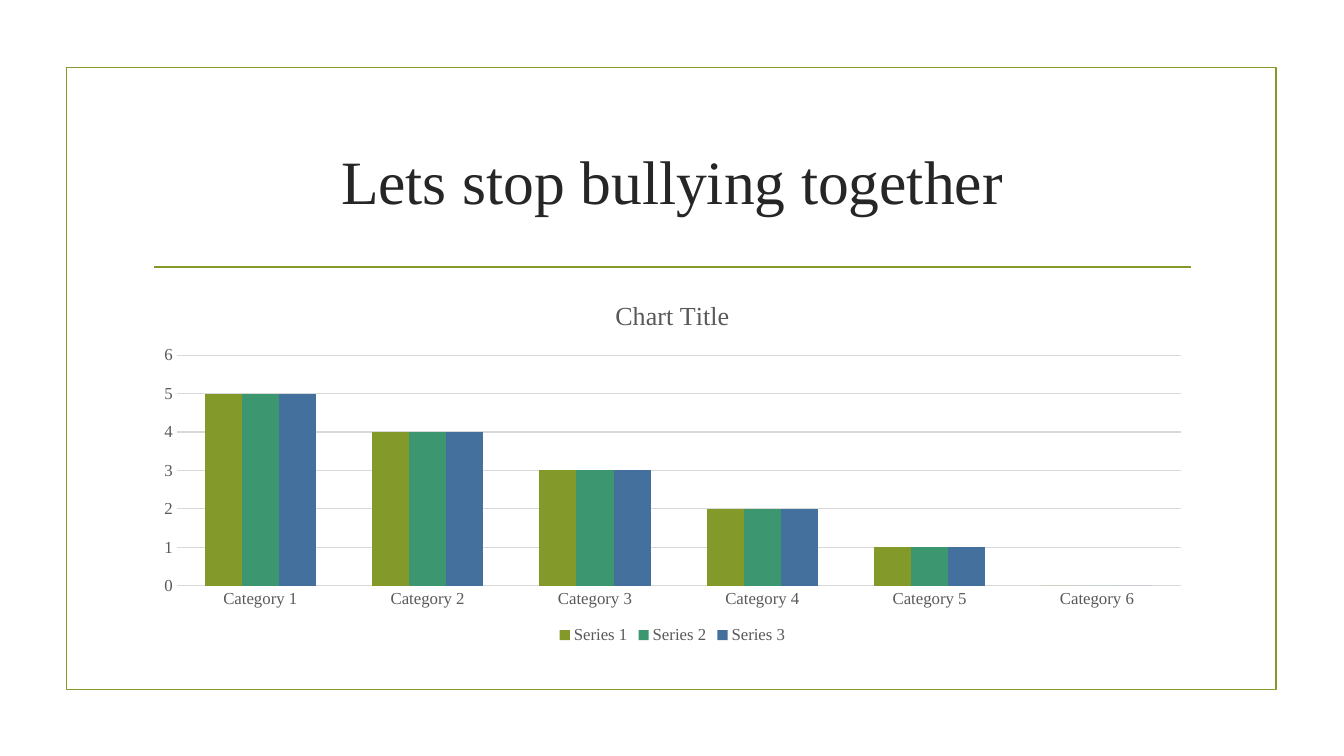
import pptx
import pptx.chart.data
import pptx.dml.color
import pptx.enum.chart
import pptx.enum.shapes
import pptx.enum.text
import pptx.oxml.xmlchemy
import pptx.util
from pptx.util import Inches

RGBColor = pptx.dml.color.RGBColor
OLIVE = RGBColor(0x83, 0x99, 0x2A)
GREEN = RGBColor(0x3C, 0x97, 0x70)
BLUE = RGBColor(0x44, 0x70, 0x9D)
INK = RGBColor(0x26, 0x26, 0x26)
GRAY = RGBColor(0x59, 0x59, 0x59)
GRID = RGBColor(0xD9, 0xD9, 0xD9)


class SlideBuilder:
    font_name = "Times New Roman"
    line_width = pptx.util.Pt(1.25)

    def __init__(self, prs):
        self.slide = prs.slides.add_slide(prs.slide_layouts[5])

    def style_font(self, font, size, color):
        font.name = self.font_name
        font.size = pptx.util.Pt(size)
        font.bold = False
        font.color.rgb = color

    def style_line(self, line, color):
        line.color.rgb = color
        line.width = self.line_width

    def title(self, text, left, top, width, height):
        sp = self.slide.shapes.title
        sp.left, sp.top = Inches(left), Inches(top)
        sp.width, sp.height = Inches(width), Inches(height)
        tf = sp.text_frame
        tf.text = text
        tf.word_wrap = True
        tf.vertical_anchor = pptx.enum.text.MSO_ANCHOR.MIDDLE
        p = tf.paragraphs[0]
        p.alignment = pptx.enum.text.PP_ALIGN.CENTER
        self.style_font(p.font, 44, INK)

    def frame(self, left, top, width, height):
        sp = self.slide.shapes.add_shape(
            pptx.enum.shapes.MSO_SHAPE.RECTANGLE,
            Inches(left), Inches(top), Inches(width), Inches(height))
        sp.shadow.inherit = False
        sp.fill.background()
        self.style_line(sp.line, OLIVE)

    def rule(self, left, right, y):
        cxn = self.slide.shapes.add_connector(
            pptx.enum.shapes.MSO_CONNECTOR.STRAIGHT,
            Inches(left), Inches(y), Inches(right), Inches(y))
        self.style_line(cxn.line, OLIVE)
        cxn._element.spPr.append(pptx.oxml.xmlchemy.OxmlElement("a:effectLst"))

    def column_chart(self, heading, categories, series, left, top, width, height):
        data = pptx.chart.data.CategoryChartData()
        data.categories = categories
        for name, values, _ in series:
            data.add_series(name, values)
        chart = self.slide.shapes.add_chart(
            pptx.enum.chart.XL_CHART_TYPE.COLUMN_CLUSTERED,
            Inches(left), Inches(top), Inches(width), Inches(height), data).chart
        self.style_font(chart.font, 12, GRAY)

        chart.has_title = True
        tf = chart.chart_title.text_frame
        tf.text = heading
        self.style_font(tf.paragraphs[0].font, 18.6, GRAY)

        chart.has_legend = True
        chart.legend.position = pptx.enum.chart.XL_LEGEND_POSITION.BOTTOM
        chart.legend.include_in_layout = False
        self.style_font(chart.legend.font, 12, GRAY)

        plot = chart.plots[0]
        plot.vary_by_categories = False
        plot.gap_width = 150
        plot.overlap = 0
        for bars, (_, _, color) in zip(plot.series, series):
            bars.format.fill.solid()
            bars.format.fill.fore_color.rgb = color

        for axis in (chart.category_axis, chart.value_axis):
            axis.major_tick_mark = pptx.enum.chart.XL_TICK_MARK.NONE
            axis.minor_tick_mark = pptx.enum.chart.XL_TICK_MARK.NONE
            axis.format.line.fill.background()
            self.style_font(axis.tick_labels.font, 12, GRAY)
        axis = chart.value_axis
        axis.minimum_scale, axis.maximum_scale, axis.major_unit = 0, 6, 1
        axis.has_major_gridlines = True
        grid = axis.major_gridlines.format.line
        grid.color.rgb = GRID
        grid.width = pptx.util.Pt(0.75)


def main():
    prs = pptx.Presentation()
    prs.slide_width = Inches(13.33)
    prs.slide_height = Inches(7.5)

    s = SlideBuilder(prs)
    s.frame(0.66, 0.67, 12, 6.17)
    s.rule(1.53, 11.81, 2.65)
    s.title("Lets stop bullying together", 1.42, 1.07, 10.5, 1.43)
    values = [5, 4, 3, 2, 1, 0]
    categories = [f"Category {i}" for i in range(1, len(values) + 1)]
    series = [(f"Series {i}", values, color)
              for i, color in enumerate((OLIVE, GREEN, BLUE), 1)]
    s.column_chart("Chart Title", categories, series, 1.42, 2.8, 10.5, 3.63)

    prs.save("out.pptx")


if __name__ == "__main__":
    main()
